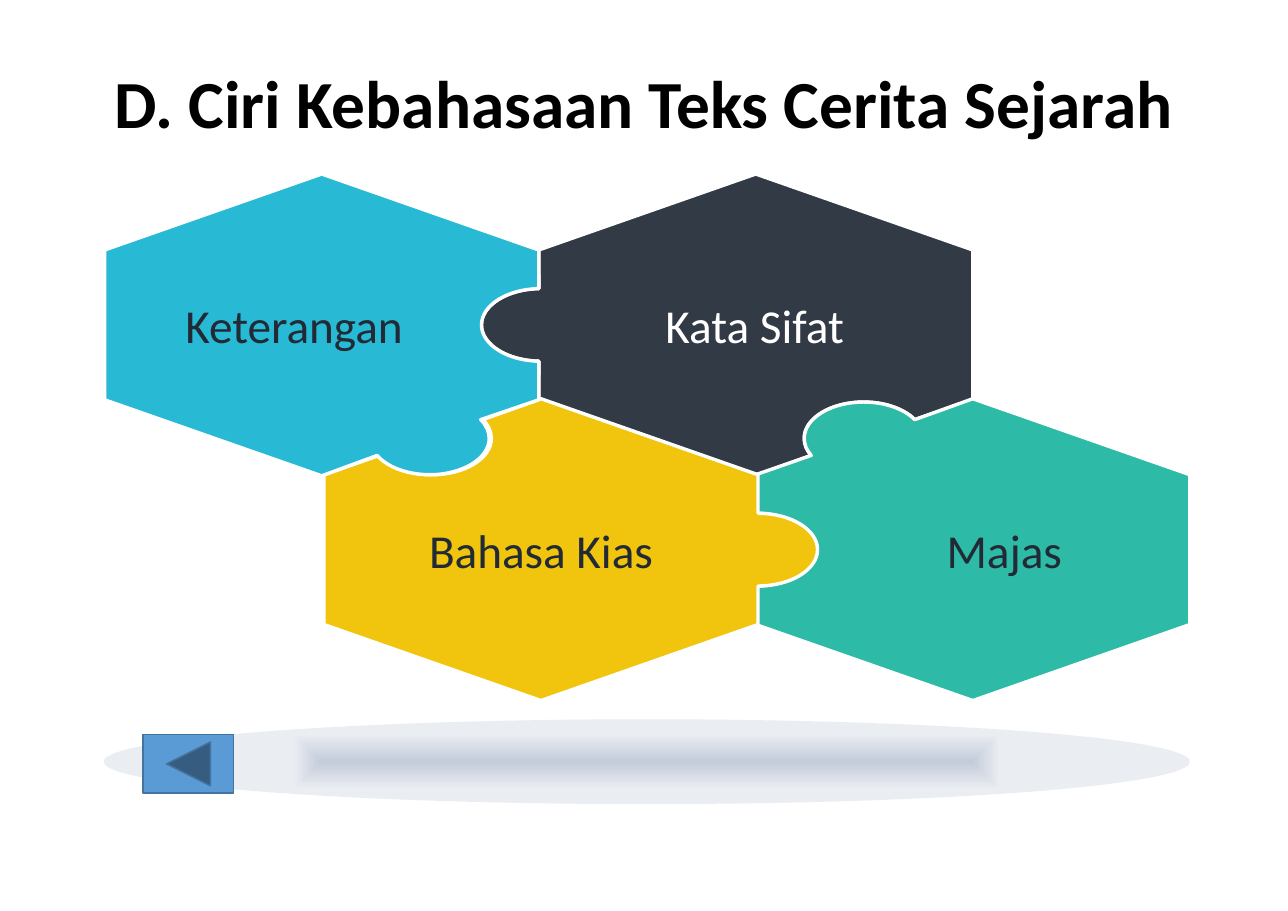
from dataclasses import dataclass
from math import ceil, cos, floor, radians, sin, tan

from pptx import Presentation
from pptx.dml.color import RGBColor
from pptx.enum.shapes import MSO_SHAPE as Preset
from pptx.enum.text import MSO_ANCHOR as Anchor, MSO_AUTO_SIZE as AutoSize, PP_ALIGN as Align
from pptx.oxml import parse_xml
from pptx.oxml.ns import nsdecls, qn
from pptx.util import Inches, Pt

FONT = "Calibri"
BLACK, WHITE, INK = "000000", "FFFFFF", "222A35"
HEX_WIDTH, HEX_HEIGHT, SHOULDER = 3.94, 2.74, 0.69
KNOB_RX, KNOB_RY = 0.54, 0.33
UPPER_TOP, LOWER_TOP = 1.58, 3.62
UPPER_RIGHT, LOWER_RIGHT, LOWER_LEFT, UPPER_LEFT = 1, 2, 4, 5

Point = tuple[float, float]


@dataclass
class Segment:
    end: Point
    controls: tuple[Point, ...] = ()


@dataclass
class Knob:
    after_corner: int
    x: float
    y: float
    start: float
    end: float

    def point(self, angle: float, pull: float = 0) -> Point:
        turn = radians(angle)
        return (self.x + KNOB_RX * (cos(turn) - pull * sin(turn)),
                self.y + KNOB_RY * (sin(turn) + pull * cos(turn)))

    def segments(self) -> list[Segment]:
        low, high = sorted((self.start, self.end))
        quarters = range(floor(low / 90) + 1, ceil(high / 90))
        angles = sorted([low, high, *(90 * quarter for quarter in quarters)],
                        reverse=self.start > self.end)
        parts = [Segment(self.point(self.start))]
        for first, last in zip(angles, angles[1:]):
            pull = 4 / 3 * tan(radians(last - first) / 4)
            controls = (self.point(first, pull), self.point(last, -pull))
            parts.append(Segment(self.point(last), controls))
        return parts


@dataclass
class Piece:
    left: float
    top: float
    fill: str
    knobs: list[Knob]

    def outline(self) -> list[Segment]:
        middle, right = self.left + HEX_WIDTH / 2, self.left + HEX_WIDTH
        bottom = self.top + HEX_HEIGHT
        high, low = self.top + SHOULDER, bottom - SHOULDER
        corners = [(middle, self.top), (right, high), (right, low),
                   (middle, bottom), (self.left, low), (self.left, high)]
        knobs = {knob.after_corner: knob.segments() for knob in self.knobs}
        segments = []
        for index, corner in enumerate(corners):
            segments += [Segment(corner), *knobs.get(index, [])]
        return segments


@dataclass
class Label:
    text: str
    left: float
    top: float
    width: float
    height: float = 0.62
    size: float = 30.9
    color: str = INK
    bold: bool = False
    spacing: float = 1.0
    auto_size: AutoSize = AutoSize.SHAPE_TO_FIT_TEXT


PIECES = [
    Piece(4.89, UPPER_TOP, "323A45", [Knob(LOWER_RIGHT, 7.84, 3.98, -31, -208),
                                      Knob(LOWER_LEFT, 4.91, 2.95, 92, 268)]),
    Piece(6.86, LOWER_TOP, "2DBAA7", [Knob(LOWER_LEFT, 6.86, 4.99, 90, -90),
                                      Knob(UPPER_LEFT, 7.84, 3.98, -208, -31)]),
    Piece(2.94, LOWER_TOP, "F1C50E", [Knob(UPPER_RIGHT, 6.88, 4.99, -90, 90),
                                      Knob(UPPER_LEFT, 3.92, 3.98, 152, -31)]),
    Piece(0.95, UPPER_TOP, "28B9D4", [Knob(UPPER_RIGHT, 4.91, 2.95, 268, 92),
                                      Knob(LOWER_RIGHT, 3.9, 3.98, -31, 152)]),
]
TITLE = Label("D. Ciri Kebahasaan Teks Cerita Sejarah", 0.81, 0.17, 10.08, 1.6,
              44, BLACK, True, 0.9, AutoSize.NONE)
LABELS = [
    Label("Keterangan", 0.94, 2.64, 3.46),
    Label("Kata Sifat", 4.88, 2.64, 3.94, color=WHITE),
    Label("Bahasa Kias", 2.94, 4.68, 3.94),
    Label("Majas", 7.42, 4.68, 3.39),
]
SHADE_STOPS = [(0, "C4CCDA"), (65, "EAEDF2"), (100, "EAEDF2")]


def rgb(color: str) -> RGBColor:
    return RGBColor.from_string(color)


def paint(shape, fill: str, line: str, width: float) -> None:
    shape.shadow.inherit = False
    shape.fill.solid()
    shape.fill.fore_color.rgb = rgb(fill)
    shape.line.color.rgb = rgb(line)
    shape.line.width = Pt(width)


def draw_piece(shapes, piece: Piece) -> None:
    segments = piece.outline()
    points = [(Inches(x), Inches(y)) for x, y in (part.end for part in segments)]
    builder = shapes.build_freeform(*points[0])
    builder.add_line_segments(points[1:], close=True)
    shape = builder.convert_to_shape()
    paint(shape, piece.fill, WHITE, 2.25)
    steps = list(shape._element.spPr.iter(qn("a:lnTo")))
    for step, part in zip(steps, segments[1:]):
        if part.controls:
            spots = "".join(
                f'<a:pt x="{Inches(x) - shape.left}" y="{Inches(y) - shape.top}"/>'
                for x, y in (*part.controls, part.end))
            curve = parse_xml(f'<a:cubicBezTo {nsdecls("a")}>{spots}</a:cubicBezTo>')
            step.getparent().replace(step, curve)


def draw_label(shapes, label: Label) -> None:
    box = shapes.add_textbox(Inches(label.left), Inches(label.top),
                             Inches(label.width), Inches(label.height))
    frame = box.text_frame
    frame.word_wrap = True
    frame.auto_size = label.auto_size
    frame.vertical_anchor = Anchor.MIDDLE
    para = frame.paragraphs[0]
    para.alignment = Align.CENTER
    para.line_spacing = label.spacing
    span = para.add_run()
    span.text = label.text
    span.font.name = FONT
    span.font.size = Pt(label.size)
    span.font.bold = label.bold
    span.font.color.rgb = rgb(label.color)


def draw_ground_shade(shapes) -> None:
    shade = shapes.add_shape(Preset.OVAL, Inches(0.94), Inches(6.53),
                             Inches(9.86), Inches(0.77))
    shade.shadow.inherit = False
    shade.line.fill.background()
    stops = "".join(f'<a:gs pos="{pos * 1000}"><a:srgbClr val="{rgb(color)}"/></a:gs>'
                    for pos, color in SHADE_STOPS)
    gradient = parse_xml(
        f'<a:gradFill {nsdecls("a")} rotWithShape="1"><a:gsLst>{stops}</a:gsLst>'
        '<a:path path="shape"><a:fillToRect l="50000" t="50000" r="50000" b="50000"/>'
        '</a:path></a:gradFill>')
    shade._element.spPr.insert(2, gradient)


def draw_back_button(shapes) -> None:
    button = shapes.add_shape(Preset.ACTION_BUTTON_BACK_OR_PREVIOUS, Inches(1.3),
                              Inches(6.67), Inches(0.82), Inches(0.53))
    paint(button, "5B9BD5", "43739E", 1)


def main() -> None:
    deck = Presentation()
    deck.slide_width, deck.slide_height = Inches(11.69), Inches(8.27)
    page = deck.slides.add_slide(deck.slide_layouts[6])
    draw_label(page.shapes, TITLE)
    puzzle = page.shapes.add_group_shape().shapes
    draw_ground_shade(puzzle)
    for piece in PIECES:
        draw_piece(puzzle, piece)
    for label in LABELS:
        draw_label(puzzle, label)
    draw_back_button(page.shapes)
    deck.save("out.pptx")


if __name__ == "__main__":
    main()
